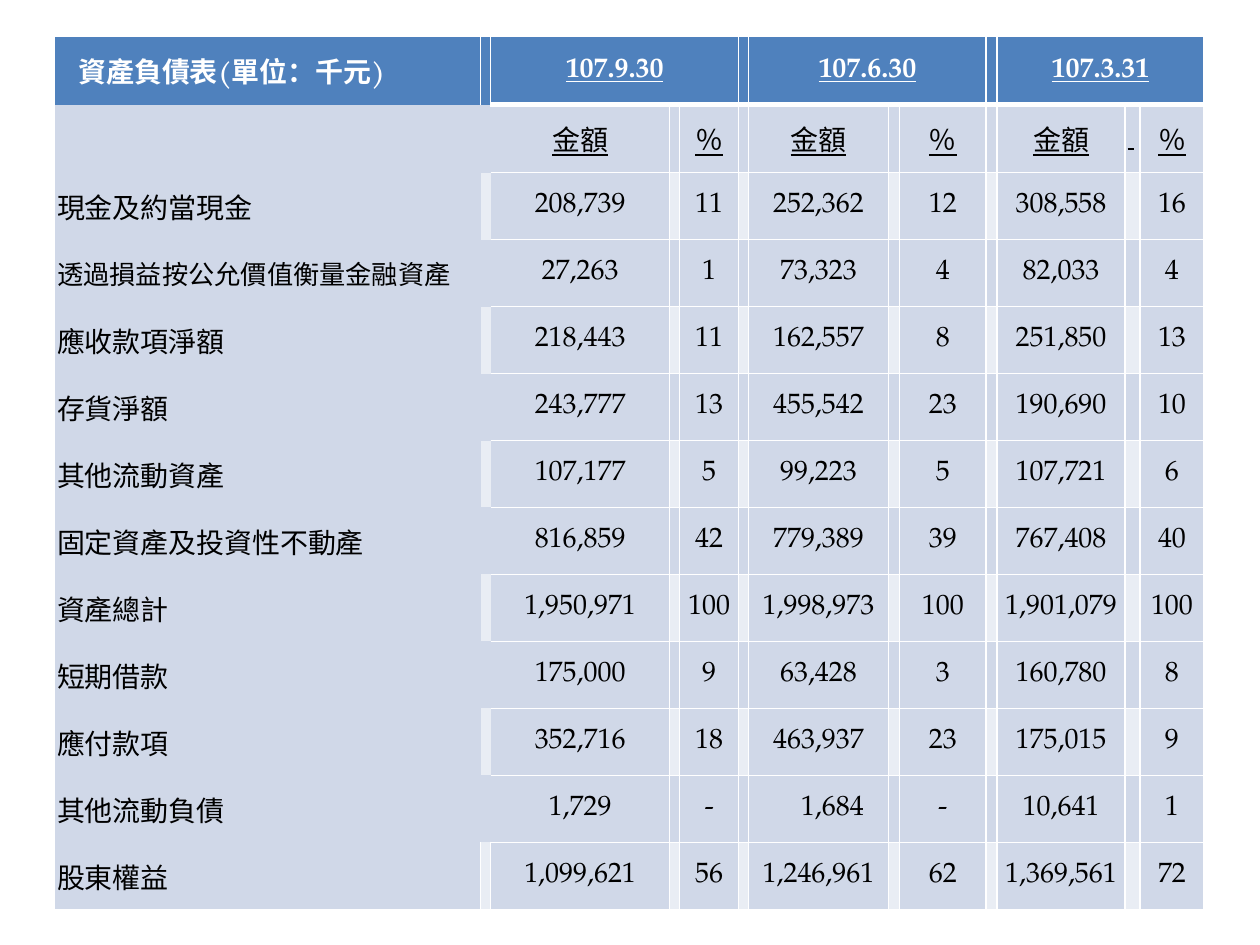
from dataclasses import dataclass

from lxml import etree
from pptx import Presentation
from pptx.dml.color import RGBColor
from pptx.enum.text import MSO_ANCHOR, PP_ALIGN
from pptx.oxml.ns import qn
from pptx.util import Cm, Pt

CENTER, LEFT = PP_ALIGN.CENTER, PP_ALIGN.LEFT
MIDDLE = MSO_ANCHOR.MIDDLE


@dataclass(frozen=True)
class Theme:
    font: str = "TeX Gyre Pagella"
    header: str = "4F81BD"
    band: str = "D0D8E8"
    gap: str = "E9EDF4"
    white: str = "FFFFFF"
    black: str = "000000"
    size: int = 16
    small: int = 15
    line: int = 1
    heavy_line: int = 3


# Column widths and row heights in cm
COL_WIDTHS = [8.59, 0.2, 3.61, 0.2, 1.19, 0.2, 2.82, 0.22, 1.75, 0.22, 2.58, 0.3, 1.29]
HEAD_HEIGHT, ROW_HEIGHT = 1.37, 1.35
HEAD_ROWS = 2

TITLE = "資產負債表(單位：千元)"
DATES = ["107.9.30", "107.6.30", "107.3.31"]
DATE_COLS = [2, 6, 10]
VALUE_COLS = [2, 4, 6, 8, 10, 12]
UNDERLINED_GAPS = [(0, 5), (1, 3), (1, 5), (1, 7), (1, 11)]
LONG_LABEL = "透過損益按公允價值衡量金融資產"
SHIFTED_VALUE = "1,684"

ACCOUNTS = [
    ("現金及約當現金", "208,739", "11", "252,362", "12", "308,558", "16"),
    (LONG_LABEL, "27,263", "1", "73,323", "4", "82,033", "4"),
    ("應收款項淨額", "218,443", "11", "162,557", "8", "251,850", "13"),
    ("存貨淨額", "243,777", "13", "455,542", "23", "190,690", "10"),
    ("其他流動資產", "107,177", "5", "99,223", "5", "107,721", "6"),
    ("固定資產及投資性不動產", "816,859", "42", "779,389", "39", "767,408", "40"),
    ("資產總計", "1,950,971", "100", "1,998,973", "100", "1,901,079", "100"),
    ("短期借款", "175,000", "9", "63,428", "3", "160,780", "8"),
    ("應付款項", "352,716", "18", "463,937", "23", "175,015", "9"),
    ("其他流動負債", "1,729", "-", SHIFTED_VALUE, "-", "10,641", "1"),
    ("股東權益", "1,099,621", "56", "1,246,961", "62", "1,369,561", "72"),
]
LAST_ROW = HEAD_ROWS + len(ACCOUNTS) - 1


class SlideBuilder:
    def __init__(self, slide, theme):
        self.s = slide
        self.theme = theme

    def table(self, left, top, widths, heights):
        frame = self.s.shapes.add_table(len(heights), len(widths), Cm(left), Cm(top),
                                        Cm(sum(widths)), Cm(sum(heights)))
        tbl = frame.table
        tbl.horz_banding = False
        for col, width in zip(tbl.columns, widths):
            col.width = Cm(width)
        for row, height in zip(tbl.rows, heights):
            row.height = Cm(height)
        return tbl

    def cell(self, cell, fill, borders):
        """Fill a cell and draw its borders; sides without a width stay bare."""
        cell.margin_left = cell.margin_right = Cm(0.05)
        cell.margin_top = cell.margin_bottom = 0
        cell.vertical_anchor = MIDDLE
        tcPr = cell._tc.get_or_add_tcPr()
        for side in "LRTB":
            ln = etree.SubElement(tcPr, qn(f"a:ln{side}"))
            if side in borders:
                ln.set("w", str(Pt(borders[side])))
                paint = etree.SubElement(ln, qn("a:solidFill"))
                etree.SubElement(paint, qn("a:srgbClr"), val=self.theme.white)
            else:
                etree.SubElement(ln, qn("a:noFill"))
        cell.fill.solid()
        cell.fill.fore_color.rgb = RGBColor.from_string(fill)

    def text(self, cell, text, color, size=None, align=CENTER, bold=False, underline=False):
        p = cell.text_frame.paragraphs[0]
        p.alignment = align
        r = p.add_run()
        r.text = text
        r.font.name = self.theme.font
        r.font.size = Pt(size or self.theme.size)
        r.font.bold = bold
        r.font.underline = underline
        r.font.color.rgb = RGBColor.from_string(color)
        return p


def cell_fill(theme, row, col):
    if row == 0:
        return theme.header
    is_gap = col % 2 == 1
    return theme.gap if is_gap and row >= HEAD_ROWS and row % 2 == 0 else theme.band


def cell_borders(theme, row, col):
    borders = dict.fromkeys("LRTB", theme.line)
    if row == 0:
        borders["B"] = theme.heavy_line
        if col < 2:
            del borders["B"]
    elif row == LAST_ROW:
        if col < 2:
            del borders["T"]
    elif col < 2:
        borders = {}
    elif col == 2:
        del borders["L"]
    return borders


def main():
    theme = Theme()
    prs = Presentation()
    prs.slide_width, prs.slide_height = Cm(25.4), Cm(19.05)
    b = SlideBuilder(prs.slides.add_slide(prs.slide_layouts[6]), theme)

    # Grid, fills and borders
    heights = [HEAD_HEIGHT] * HEAD_ROWS + [ROW_HEIGHT] * len(ACCOUNTS)
    tbl = b.table(1.1, 0.74, COL_WIDTHS, heights)
    for row in range(len(heights)):
        for col in range(len(COL_WIDTHS)):
            b.cell(tbl.cell(row, col), cell_fill(theme, row, col),
                   cell_borders(theme, row, col))

    # Header: title and dates
    p = b.text(tbl.cell(0, 0), TITLE, theme.white, align=LEFT, bold=True)
    p._p.get_or_add_pPr().set("indent", str(Cm(0.43)))
    for col, date in zip(DATE_COLS, DATES):
        tbl.cell(0, col).merge(tbl.cell(0, col + 2))
        b.text(tbl.cell(0, col), date, theme.white, bold=True, underline=True)

    # Subheader: amount and percentage
    for col, name in zip(VALUE_COLS, ["金額", "％"] * len(DATES)):
        b.text(tbl.cell(1, col), name, theme.black, underline=True)
    for row, col in UNDERLINED_GAPS:
        color = theme.black if row else theme.white
        b.text(tbl.cell(row, col), " ", color, align=LEFT, underline=True)

    # Account rows
    for row, (label, *values) in enumerate(ACCOUNTS, HEAD_ROWS):
        is_long = label == LONG_LABEL
        if is_long:
            tbl.cell(row, 0).merge(tbl.cell(row, 1))
        b.text(tbl.cell(row, 0), label, theme.black,
               theme.small if is_long else theme.size, LEFT)
        for col, value in zip(VALUE_COLS, values):
            p = b.text(tbl.cell(row, col), value, theme.black)
            if value == SHIFTED_VALUE:
                p._p.get_or_add_pPr().set("marL", str(Cm(0.56)))

    prs.save("out.pptx")


if __name__ == "__main__":
    main()
